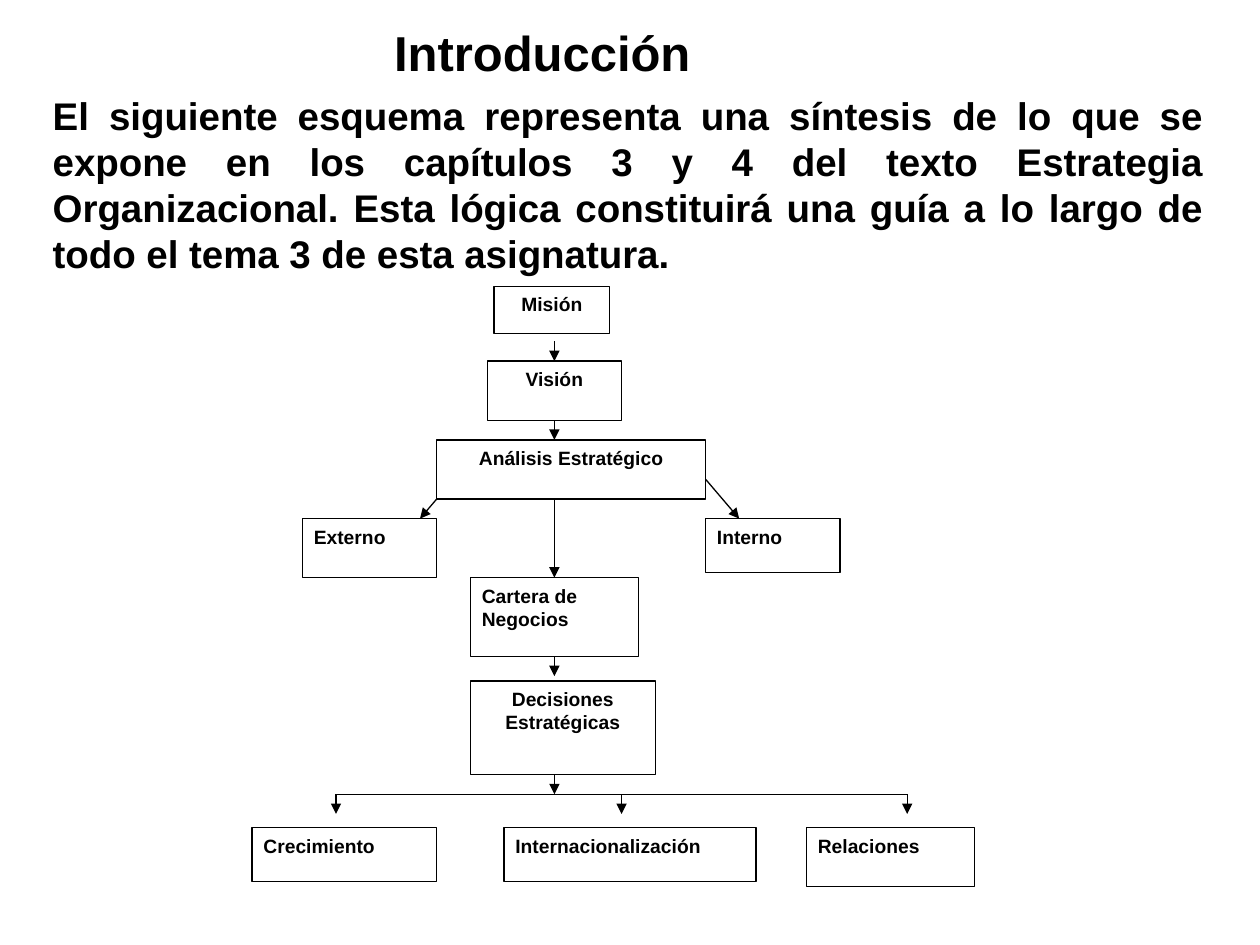
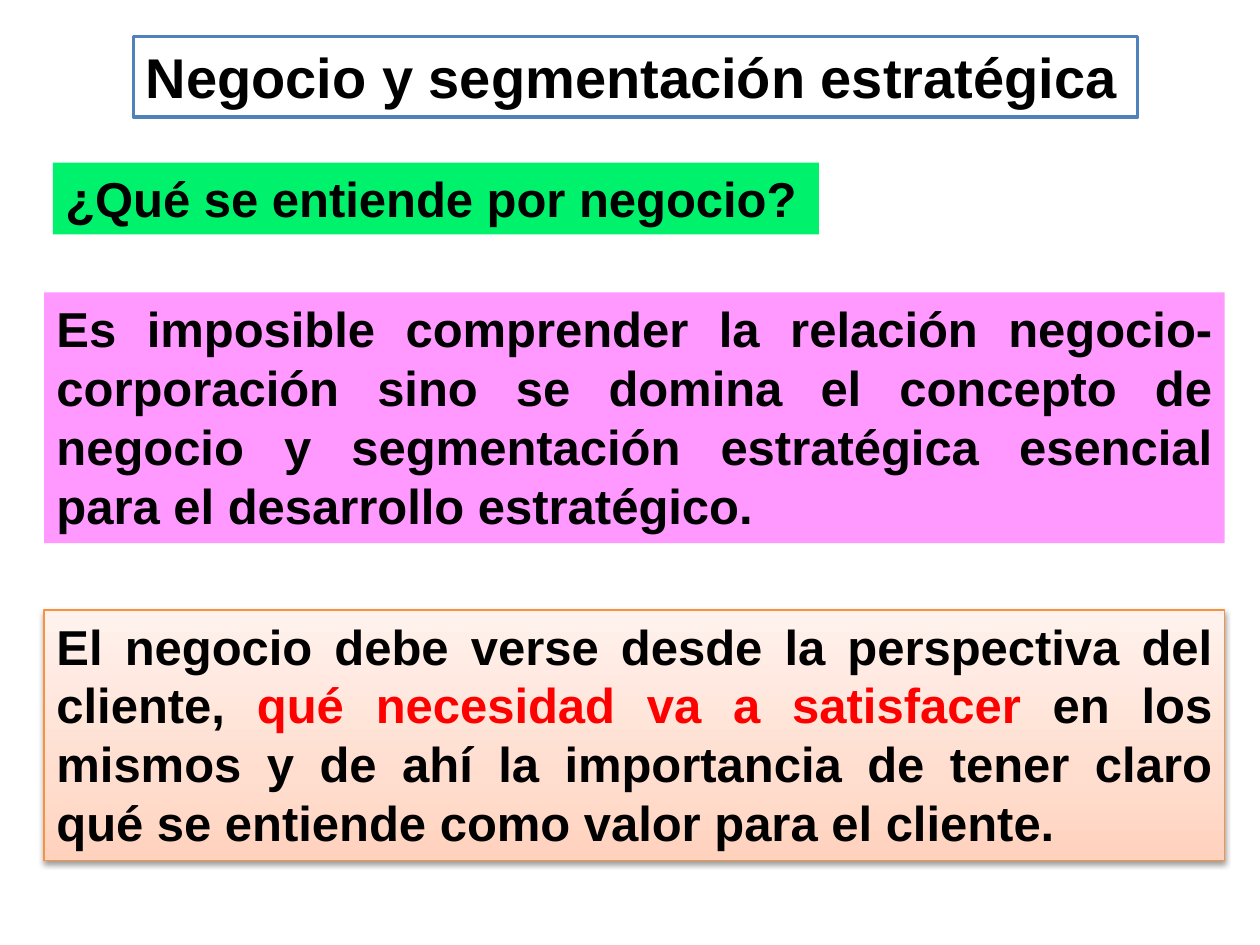
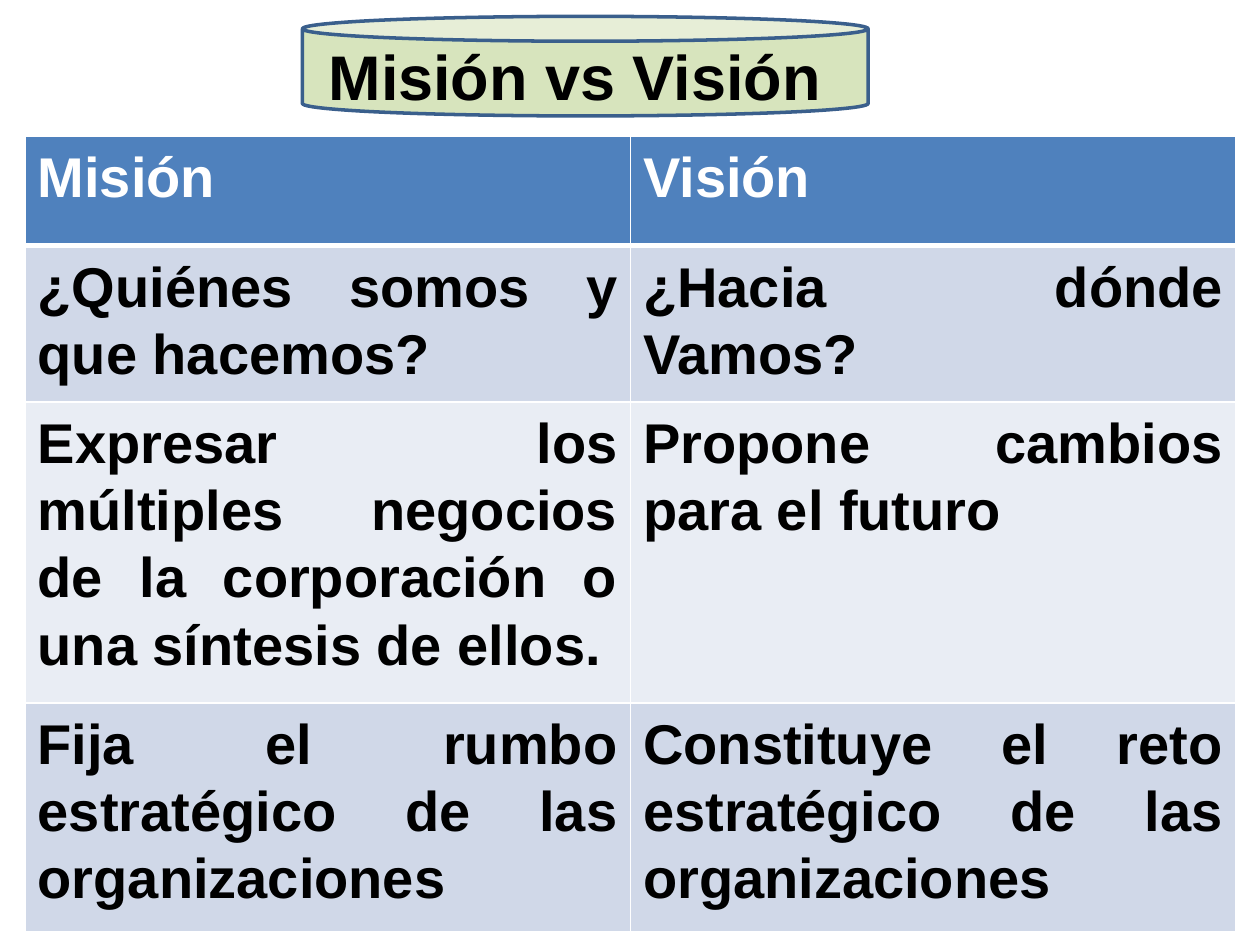
from dataclasses import dataclass
from typing import Optional

from lxml.etree import SubElement
from pptx import Presentation
from pptx.dml.color import RGBColor
from pptx.enum.shapes import MSO_CONNECTOR as Connector, MSO_SHAPE as Shape
from pptx.enum.text import MSO_ANCHOR as Anchor, PP_ALIGN as Align
from pptx.oxml.ns import qn
from pptx.util import Inches, Pt

SLIDE_WIDTH, SLIDE_HEIGHT = 10, 7.5
FONT = "Arial"
BLACK, WHITE, RED = "000000", "FFFFFF", "FF0000"
BLUE, DARK_BLUE = "4F81BD", "3A5F8C"
GREEN, PINK, OLIVE, ORANGE = "00F26D", "FF99FF", "D7E4BD", "F69240"
BANDS = "D0D8E8", "E9EDF4"
PEACH_STOPS = (0, "FFD2BD"), (35, "FFDED0"), (100, "FFF2ED")

COLUMN, ROW = SLIDE_WIDTH / 75, SLIDE_HEIGHT / 48
CHART_LEFT, CHART_TOP = 2, 2.71
THIN = 0.75
AXIS = 18
BRANCH_ROW = 23
BRANCH_COLUMNS = 5, 22, 39


@dataclass(frozen=True)
class Span:
    text: str
    color: str = BLACK


@dataclass(frozen=True)
class Panel:
    left: float
    top: float
    width: float
    height: float
    spans: tuple[Span, ...] = ()
    size: float = 28
    align: Align = Align.LEFT
    fill: Optional[str] = None
    line: Optional[str] = None
    line_width: float = THIN
    spacing: Optional[float] = None
    geometry: Shape = Shape.RECTANGLE
    side_inset: float = 0.1


@dataclass(frozen=True)
class Node:
    text: str
    column: float
    row: float
    columns: float
    rows: float = 3
    align: Align = Align.LEFT


@dataclass(frozen=True)
class Link:
    start: tuple[float, float]
    end: tuple[float, float]
    source: Optional[str] = None
    target: Optional[str] = None
    arrow: bool = True


NODES = (
    Node("Misión", 14.4, -2.8, 6.9, 2.4, Align.CENTER),
    Node("Visión", 14, 1, 8, align=Align.CENTER),
    Node("Análisis Estratégico", 11, 5, 16, align=Align.CENTER),
    Node("Externo", 3, 9, 8),
    Node("Interno", 27, 9, 8, 2.75),
    Node("Cartera de Negocios", 13, 12, 10, 4),
    Node("Decisiones Estratégicas", 13, 17.25, 11, 4.75, Align.CENTER),
    Node("Crecimiento", 0, 24.7, 11, 2.75),
    Node("Internacionalización", 15, 24.7, 15, 2.75),
    Node("Relaciones", 33, 24.7, 10),
)
LINKS = (
    Link((AXIS, 0), (AXIS, 1), target="Visión"),
    Link((AXIS, 4), (AXIS, 5), source="Visión"),
    Link((11, 8), (10, 9)),
    Link((27, 7), (29, 9)),
    Link((AXIS, 8), (AXIS, 12), target="Cartera de Negocios"),
    Link((AXIS, 16), (AXIS, 17), source="Cartera de Negocios"),
    Link((AXIS, 22), (AXIS, BRANCH_ROW)),
    Link((BRANCH_COLUMNS[0], BRANCH_ROW), (BRANCH_COLUMNS[-1], BRANCH_ROW), arrow=False),
    *(Link((column, BRANCH_ROW), (column, BRANCH_ROW + 1)) for column in BRANCH_COLUMNS),
)
INTRO_PANELS = (
    Panel(3.03, 0.13, 2.58, 0.57, (Span("Introducción"),)),
    Panel(0.32, 0.68, 9.33, 1.58, (Span(
        "El siguiente esquema representa una síntesis de lo que se expone en los "
        "capítulos 3 y 4 del texto Estrategia Organizacional. Esta lógica constituirá "
        "una guía a lo largo de todo el tema 3 de esta asignatura."),), 22, Align.JUSTIFY),
)
BUSINESS_PANELS = (
    Panel(0.35, 2.32, 9.37, 1.99, (Span(
        "Es imposible comprender la relación negocio-corporación sino se domina el "
        "concepto de negocio y segmentación estratégica esencial para el desarrollo "
        "estratégico."),), align=Align.JUSTIFY, fill=PINK),
    Panel(0.42, 1.29, 6.08, 0.57, (Span("¿Qué se entiende por negocio?"),),
          align=Align.JUSTIFY, fill=GREEN),
    Panel(1.06, 0.29, 7.97, 0.64, (Span("Negocio y segmentación estratégica"),), 32,
          fill=WHITE, line=BLUE, line_width=2),
)
CLIENT_PANEL = Panel(0.35, 4.84, 9.37, 1.99, (
    Span("El negocio debe verse desde la perspectiva del cliente, "),
    Span("qué necesidad va a satisfacer ", RED),
    Span("en los mismos y de ahí la importancia de tener claro qué se entiende como "
         "valor para el cliente."),
), align=Align.JUSTIFY, line=ORANGE)
COMPARISON_PANELS = (
    Panel(2.4, 0.13, 4.49, 0.79, fill=OLIVE, line=DARK_BLUE, line_width=2,
          geometry=Shape.CAN),
    Panel(2.51, 0.21, 4.15, 0.7, (Span("Misión vs Visión"),), 36, Align.JUSTIFY,
          spacing=1.07),
)
COMPARISON = (
    ("Misión", "Visión"),
    ("¿Quiénes somos y que hacemos?", "¿Hacia dónde Vamos?"),
    ("Expresar los múltiples negocios de la corporación o una síntesis de ellos.",
     "Propone cambios para el futuro"),
    ("Fija el rumbo estratégico de las organizaciones",
     "Constituye el reto estratégico de las organizaciones"),
)
COMPARISON_HEIGHTS = 0.87, 1.24, 2.39, 1.8


def rgb(color: str) -> RGBColor:
    return RGBColor.from_string(color)


def add_color(parent, color: str):
    return SubElement(parent, qn("a:srgbClr"), val=color)


def write(frame, spans: tuple[Span, ...], size: float, align: Align,
          spacing: Optional[float] = None) -> None:
    para = frame.paragraphs[0]
    para.alignment = align
    if spacing:
        para.line_spacing = spacing
    para.font.name, para.font.size, para.font.bold = FONT, Pt(size), True
    para.font.color.rgb = rgb(spans[0].color)
    for span in spans:
        run = para.add_run()
        run.text = span.text
        if span.color != spans[0].color:
            run.font.color.rgb = rgb(span.color)


def draw_panel(page, panel: Panel):
    place = [Inches(v) for v in (panel.left, panel.top, panel.width, panel.height)]
    if panel.fill or panel.line:
        box = page.shapes.add_shape(panel.geometry, *place)
        box.shadow.inherit = False
    else:
        box = page.shapes.add_textbox(*place)
    if panel.fill:
        box.fill.solid()
        box.fill.fore_color.rgb = rgb(panel.fill)
    if panel.line:
        box.line.color.rgb = rgb(panel.line)
        box.line.width = Pt(panel.line_width)
    else:
        box.line.fill.background()
    if panel.spans:
        frame = box.text_frame
        frame.word_wrap = True
        frame.vertical_anchor = Anchor.TOP
        frame.margin_left = frame.margin_right = Inches(panel.side_inset)
        write(frame, panel.spans, panel.size, panel.align, panel.spacing)
    return box


def draw_node(page, node: Node):
    return draw_panel(page, Panel(
        CHART_LEFT + node.column * COLUMN, CHART_TOP + node.row * ROW,
        node.columns * COLUMN, node.rows * ROW, (Span(node.text),), 11, node.align,
        WHITE, BLACK, side_inset=0.09))


def draw_link(page, link: Link, boxes: dict) -> None:
    ends = [Inches(v) for column, row in (link.start, link.end)
            for v in (CHART_LEFT + column * COLUMN, CHART_TOP + row * ROW)]
    line = page.shapes.add_connector(Connector.STRAIGHT, *ends)
    if link.source:
        line.begin_connect(boxes[link.source], 2)
    if link.target:
        line.end_connect(boxes[link.target], 0)
    line.line.color.rgb = rgb(BLACK)
    line.line.width = Pt(THIN)
    properties = line._element.spPr
    if link.arrow:
        SubElement(properties.find(qn("a:ln")), qn("a:tailEnd"), type="triangle")
    SubElement(properties, qn("a:effectLst"))


def add_peach_gradient(box) -> None:
    properties = box._element.spPr
    gradient = SubElement(properties, qn("a:gradFill"), rotWithShape="1")
    stops = SubElement(gradient, qn("a:gsLst"))
    for position, color in PEACH_STOPS:
        add_color(SubElement(stops, qn("a:gs"), pos=str(position * 1000)), color)
    SubElement(gradient, qn("a:lin"), ang=str(270 * 60000), scaled="1")
    properties.find(qn("a:ln")).addprevious(gradient)


def add_soft_shadow(box) -> None:
    effects = box._element.spPr.find(qn("a:effectLst"))
    shadow = SubElement(effects, qn("a:outerShdw"), blurRad=str(Pt(3.1)),
                        dist=str(Pt(1.6)), dir=str(90 * 60000), rotWithShape="0")
    SubElement(add_color(shadow, BLACK), qn("a:alpha"), val="38000")


def border_cell(cell, top: float, bottom: float) -> None:
    properties = cell._tc.get_or_add_tcPr()
    for side, width in (("L", 1), ("R", 1), ("T", top), ("B", bottom)):
        edge = SubElement(properties, qn(f"a:ln{side}"), w=str(Pt(width)))
        add_color(SubElement(edge, qn("a:solidFill")), WHITE)


def draw_comparison(page) -> None:
    table = page.shapes.add_table(
        len(COMPARISON), 2, Inches(0.2), Inches(1.08), Inches(9.61),
        Inches(sum(COMPARISON_HEIGHTS))).table
    for r, (texts, height) in enumerate(zip(COMPARISON, COMPARISON_HEIGHTS)):
        table.rows[r].height = Inches(height)
        fill, color = (BANDS[(r - 1) % 2], BLACK) if r else (BLUE, WHITE)
        for c, text in enumerate(texts):
            cell = table.cell(r, c)
            border_cell(cell, 3 if r == 1 else 1, 3 if r == 0 else 1)
            cell.fill.solid()
            cell.fill.fore_color.rgb = rgb(fill)
            write(cell.text_frame, (Span(text, color),), 32, Align.JUSTIFY, 1.07)


def add_page(deck, panels: tuple[Panel, ...]):
    page = deck.slides.add_slide(deck.slide_layouts[6])
    for panel in panels:
        draw_panel(page, panel)
    return page


def main() -> None:
    deck = Presentation()
    deck.slide_width, deck.slide_height = Inches(SLIDE_WIDTH), Inches(SLIDE_HEIGHT)

    intro = add_page(deck, INTRO_PANELS)
    boxes = {node.text: draw_node(intro, node) for node in NODES}
    for link in LINKS:
        draw_link(intro, link, boxes)

    business = add_page(deck, BUSINESS_PANELS)
    client = draw_panel(business, CLIENT_PANEL)
    add_peach_gradient(client)
    add_soft_shadow(client)

    draw_comparison(add_page(deck, COMPARISON_PANELS))
    deck.save("out.pptx")


if __name__ == "__main__":
    main()
